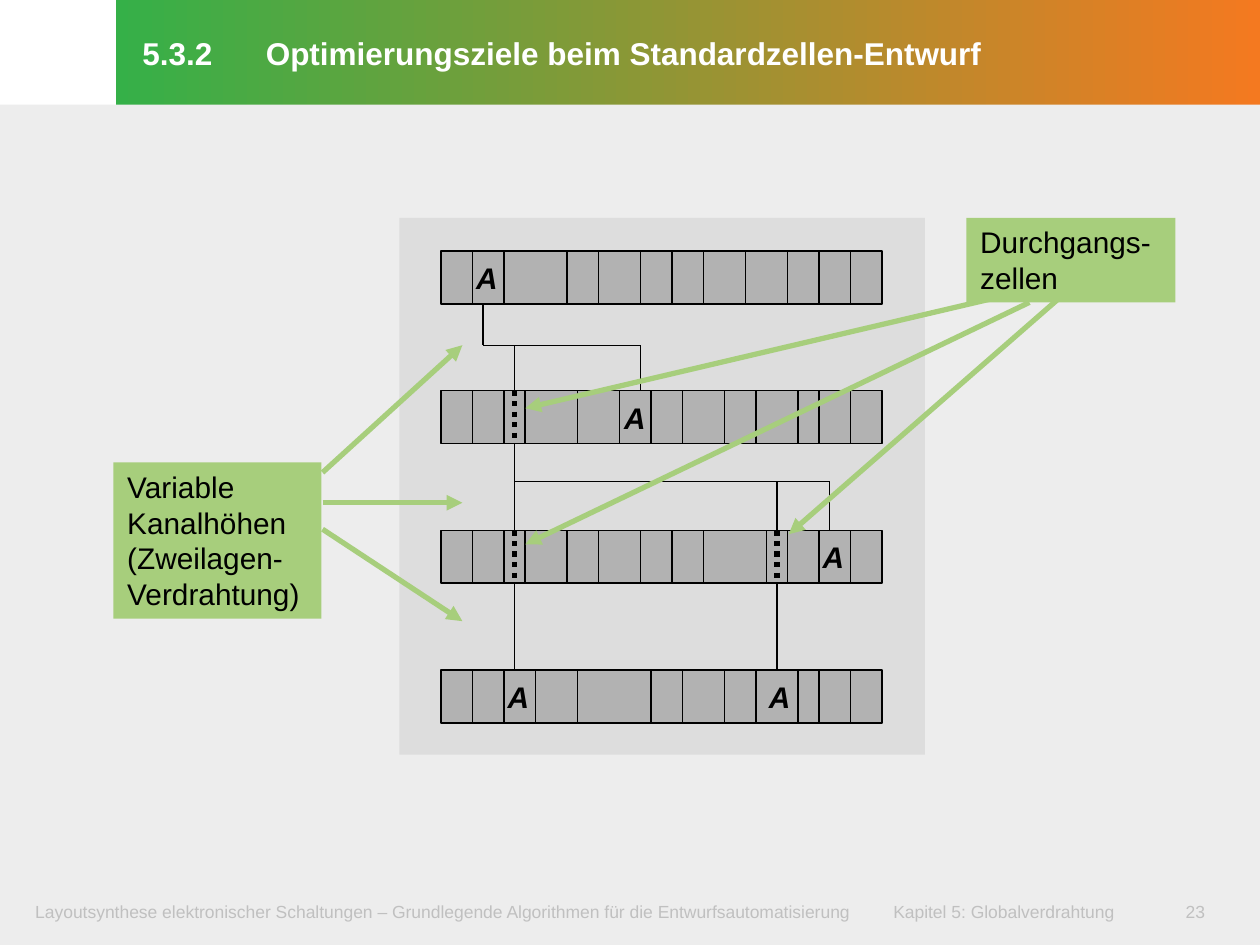
import pptx
import pptx.util
import pptx.dml.color
import pptx.enum.dml
import pptx.enum.shapes
import pptx.enum.text
import pptx.oxml
import pptx.oxml.ns

COLORS = {
    "body": "EDEDED", "muted": "C0C0C0", "white": "FFFFFF", "black": "000000",
    "start": "35B048", "end": "F47920", "chip": "DDDDDD", "cell": "B2B2B2",
    "accent": "A7CE7C",
}
TITLE = "5.3.2\tOptimierungsziele beim Standardzellen-Entwurf"
FOOTER = ("Layoutsynthese elektronischer Schaltungen – Grundlegende Algorithmen "
          "für die Entwurfsautomatisierung\tKapitel 5: Globalverdrahtung")
PAGE = "23"

LEFT, TOP, UNIT, COLUMNS = 3.5, 1.99, 1 / 12, 42
ROW_HEIGHT, ROW_PITCH = 0.42, 1.11
CHANNELS = (2.74, 3.82)

CELL_ROWS = [
    {"dividers": (3, 6, 12, 15, 19, 22, 25, 29, 33, 36, 39), "pins": (4.3,), "feedthroughs": ()},
    {"dividers": (3, 6, 8, 13, 17, 20, 23, 27, 30, 34, 36, 39), "pins": (18.4,), "feedthroughs": (7,)},
    {"dividers": (3, 6, 8, 12, 15, 19, 22, 25, 31, 33, 36, 39), "pins": (37.3,), "feedthroughs": (7, 32)},
    {"dividers": (3, 6, 9, 13, 20, 23, 27, 30, 34, 36, 39), "pins": (7.3, 32.2), "feedthroughs": ()},
]
CALLOUTS = [
    {"box": (7.67, 1.73, 1.66, 0.67), "lines": ["Durchgangs-", "zellen"]},
    {"box": (0.9, 3.67, 1.65, 1.24),
     "lines": ["Variable Kanalhöhen", "(Zweilagen-", "Verdrahtung)"]},
]
FEEDTHROUGH_ARROWS = [
    ((8.09, 2.32), (4.17, 3.24)),
    ((8.17, 2.4), (4.17, 4.32)),
    ((8.46, 2.32), (6.26, 4.24)),
]
CHANNEL_ARROWS = [
    ((2.56, 3.99), (3.67, 3.99)),
    ((2.56, 4.2), (3.67, 4.93)),
    ((2.56, 3.75), (3.67, 2.74)),
]

INCH = pptx.util.Inches
RECTANGLE = pptx.enum.shapes.MSO_SHAPE.RECTANGLE
STRAIGHT = pptx.enum.shapes.MSO_CONNECTOR.STRAIGHT
DOTTED = pptx.enum.dml.MSO_LINE.ROUND_DOT
ALIGN_LEFT = pptx.enum.text.PP_ALIGN.LEFT
MIDDLE = pptx.enum.text.MSO_ANCHOR.MIDDLE
NO_SIZING = pptx.enum.text.MSO_AUTO_SIZE.NONE


def rgb(name):
    return pptx.dml.color.RGBColor.from_string(COLORS[name])


def column_x(column):
    return LEFT + column * UNIT


def row_y(row):
    return TOP + row * ROW_PITCH


def set_values(target, values):
    for name, value in values.items():
        setattr(target, name, value)


def add_xml(parent, tag, **attributes):
    element = pptx.oxml.parse_xml(f"<a:{tag} {pptx.oxml.ns.nsdecls('a')}/>")
    for name, value in attributes.items():
        element.set(name, str(value))
    parent.append(element)
    return element


def add_rectangle(slide, box, fill, outline=None):
    shape = slide.shapes.add_shape(RECTANGLE, *map(INCH, box))
    shape.shadow.inherit = False
    shape.fill.solid()
    shape.fill.fore_color.rgb = rgb(fill)
    if outline:
        shape.line.color.rgb = rgb(outline)
        shape.line.width = pptx.util.Pt(1)
    else:
        shape.line.fill.background()
    return shape


def add_line(slide, start, end, color="black", width=0.75, dash=None, arrow=False):
    line = slide.shapes.add_connector(STRAIGHT, *map(INCH, (*start, *end)))
    line.line.color.rgb = rgb(color)
    line.line.width = pptx.util.Pt(width)
    if dash:
        line.line.dash_style = dash
    if arrow:
        add_xml(line.line._get_or_add_ln(), "tailEnd", type="triangle")
    add_xml(line._element.spPr, "effectLst")


def write(shape, lines, size, color, insets, wrap=True, anchor=None, tab=None,
          spacing=None, **font):
    frame = shape.text_frame
    margins = zip(("margin_left", "margin_top", "margin_right", "margin_bottom"),
                  map(INCH, insets))
    set_values(frame, {"auto_size": NO_SIZING, "word_wrap": wrap, **dict(margins)})
    if anchor is not None:
        frame.vertical_anchor = anchor
    frame.text = "\n".join(lines)
    for paragraph in frame.paragraphs:
        if tab:
            tabs = add_xml(paragraph._p.get_or_add_pPr(), "tabLst")
            add_xml(tabs, "tab", pos=INCH(tab), algn="l")
        if spacing:
            paragraph.line_spacing = pptx.util.Pt(spacing)
        paragraph.alignment = ALIGN_LEFT
        for run in paragraph.runs:
            set_values(run.font, {"name": "Arial", "size": pptx.util.Pt(size), **font})
            run.font.color.rgb = rgb(color)


def add_text(slide, box, lines, *style, **options):
    write(slide.shapes.add_textbox(*map(INCH, box)), lines, *style, **options)


def build_frame(slide):
    add_rectangle(slide, (0, 0.83, 10, 6.67), "body")
    footer_insets = (0.12, 0.06, 0.12, 0.06)
    add_text(slide, (0.16, 7.09, 9.46, 0.32), [FOOTER], 10, "muted", footer_insets, tab=6.81)
    add_text(slide, (9.29, 7.09, 0.59, 0.32), [PAGE], 10, "muted", footer_insets)
    title = slide.shapes.title
    set_values(title, dict(zip(("left", "top", "width", "height"),
                               map(INCH, (0.92, 0, 9.08, 0.83)))))
    title.fill.gradient()
    title.fill.gradient_angle = 0
    for stop, color, position in zip(title.fill.gradient_stops, ("start", "end"), (0, 1)):
        stop.color.rgb = rgb(color)
        stop.position = position
    write(title, [TITLE], 18, "white", (0.21, 0.05, 0.1, 0.07), anchor=MIDDLE,
          tab=0.98, spacing=23.5, bold=True)


def build_wires(slide):
    upper, lower = CHANNELS
    wires = [
        (32, lower, 32, row_y(3)), (7, upper, 7, row_y(3)),
        (4, row_y(0) + ROW_HEIGHT, 4, upper), (19, upper, 19, row_y(1)),
        (37, lower, 37, row_y(2)), (4, upper, 19, upper), (7, lower, 37, lower),
    ]
    for start_column, start_y, end_column, end_y in wires:
        add_line(slide, (column_x(start_column), start_y), (column_x(end_column), end_y))


def build_cells(slide):
    for index, row in enumerate(CELL_ROWS):
        top = row_y(index)
        bottom = top + ROW_HEIGHT
        add_rectangle(slide, (LEFT, top, COLUMNS * UNIT, ROW_HEIGHT), "cell", "black")
        for column in row["dividers"]:
            add_line(slide, (column_x(column), top), (column_x(column), bottom))
        for column in row["pins"]:
            add_text(slide, (column_x(column) - 0.19, top + 0.02, 0.38, 0.39), ["A"], 17,
                     "black", (0.11, 0.05, 0.11, 0.05), wrap=False, bold=True, italic=True)


def build_annotations(slide):
    for start, end in FEEDTHROUGH_ARROWS:
        add_line(slide, start, end, "accent", 3, arrow=True)
    for index, row in enumerate(CELL_ROWS):
        for column in row["feedthroughs"]:
            x, top = column_x(column), row_y(index)
            add_line(slide, (x, top), (x, top + ROW_HEIGHT), width=3, dash=DOTTED)
    for callout in CALLOUTS:
        shape = add_rectangle(slide, callout["box"], "accent")
        write(shape, callout["lines"], 17, "black", (0.11, 0.05, 0.11, 0.05),
              anchor=pptx.enum.text.MSO_ANCHOR.TOP)
    for start, end in CHANNEL_ARROWS:
        add_line(slide, start, end, "accent", 3, arrow=True)


def main():
    presentation = pptx.Presentation()
    presentation.slide_width, presentation.slide_height = INCH(10), INCH(7.5)
    slide = presentation.slides.add_slide(presentation.slide_layouts[5])
    build_frame(slide)
    add_rectangle(slide, (3.17, 1.73, 4.17, 4.26), "chip")
    build_wires(slide)
    build_cells(slide)
    build_annotations(slide)
    presentation.save("out.pptx")


if __name__ == "__main__":
    main()
